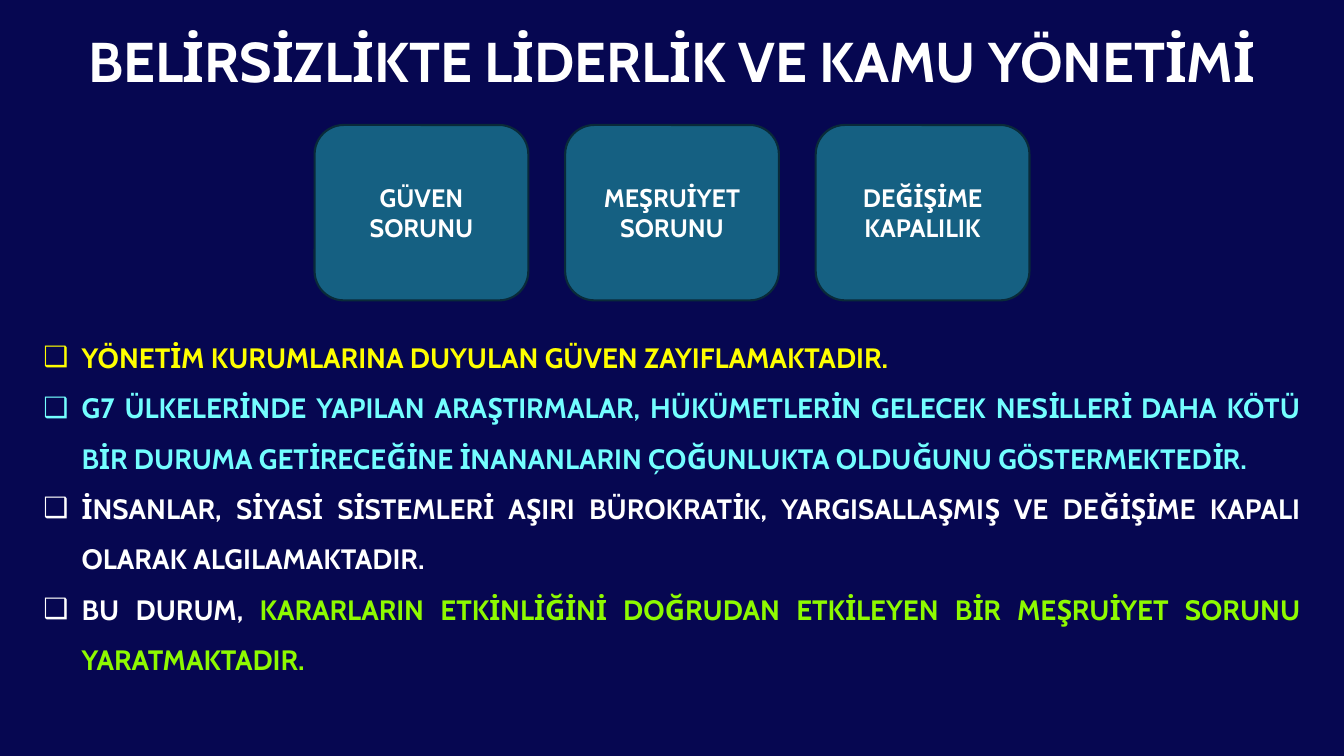
from lxml import etree
from pptx import Presentation
from pptx import util as u
from pptx.dml import color
from pptx.enum import shapes, text
from pptx.oxml import ns

NAVY, WHITE = "060751", "FFFFFF"
TITLE = "BELİRSİZLİKTE LİDERLİK VE KAMU YÖNETİMİ"
CARDS = ["GÜVEN SORUNU", "MEŞRUİYET SORUNU", "DEĞİŞİME KAPALILIK"]
POINTS = [
    [("YÖNETİM KURUMLARINA DUYULAN GÜVEN ZAYIFLAMAKTADIR.", "FFFF00")],
    [("G7 ÜLKELERİNDE YAPILAN ARAŞTIRMALAR, HÜKÜMETLERİN GELECEK NESİLLERİ "
      "DAHA KÖTÜ BİR DURUMA GETİRECEĞİNE İNANANLARIN ÇOĞUNLUKTA OLDUĞUNU "
      "GÖSTERMEKTEDİR.", "73FEFF")],
    [("İNSANLAR, SİYASİ SİSTEMLERİ AŞIRI BÜROKRATİK, YARGISALLAŞMIŞ VE "
      "DEĞİŞİME KAPALI OLARAK ALGILAMAKTADIR.", WHITE)],
    [("BU DURUM, ", WHITE),
     ("KARARLARIN ETKİNLİĞİNİ DOĞRUDAN ETKİLEYEN BİR MEŞRUİYET SORUNU "
      "YARATMAKTADIR.", "8EFA00")],
]


def paint(fill, tone):
    """Fill with a solid colour given as a hex string."""
    fill.solid()
    fill.fore_color.rgb = color.RGBColor.from_string(tone)


def apply(item, **values):
    """Set each named format value on an item."""
    for name, value in values.items():
        setattr(item, name, value)


def place(shape, left, top, width, height):
    """Move and size a shape, in inches."""
    apply(shape, left=u.Inches(left), top=u.Inches(top),
          width=u.Inches(width), height=u.Inches(height))


def write(para, runs, size, **form):
    """Write coloured bold runs into a formatted paragraph."""
    apply(para, **form)
    for words, tone in runs:
        run = para.add_run()
        run.text = words
        apply(run.font, name="Cabin", size=u.Pt(size), bold=True)
        paint(run.font.fill, tone)


def bullet(para):
    """Give a paragraph a hanging box bullet."""
    props = para._p.get_or_add_pPr()
    indent = u.Inches(0.38)
    props.set("marL", str(indent))
    props.set("indent", str(-indent))
    etree.SubElement(props, ns.qn("a:buChar")).set("char", "❑")


def add_title(slide):
    """Set the slide title."""
    title = slide.shapes.title
    place(title, 0.33, 0.2, 12.67, 0.87)
    title.text_frame.vertical_anchor = text.MSO_ANCHOR.MIDDLE
    write(title.text_frame.paragraphs[0], [(TITLE, WHITE)], 40,
          alignment=text.PP_ALIGN.CENTER, line_spacing=0.9)


def add_cards(slide):
    """Draw the row of rounded problem cards as one group."""
    left, span, width = 3.12, 7.09, 2.12
    step = (span - width) / (len(CARDS) - 1)
    group = slide.shapes.add_group_shape()
    for i, label in enumerate(CARDS):
        card = group.shapes.add_shape(
            shapes.MSO_SHAPE.ROUNDED_RECTANGLE, u.Inches(left + i * step),
            u.Inches(1.24), u.Inches(width), u.Inches(1.74))
        card.shadow.inherit = False
        paint(card.fill, "156082")
        paint(card.line.fill, "092A39")
        card.line.width = u.Pt(1.5)
        apply(card.text_frame, word_wrap=True,
              vertical_anchor=text.MSO_ANCHOR.MIDDLE)
        write(card.text_frame.paragraphs[0], [(label, WHITE)], 18,
              alignment=text.PP_ALIGN.CENTER)


def add_points(slide):
    """Fill the body placeholder with the bulleted points."""
    body = slide.placeholders[1]
    place(body, 0.33, 3.16, 12.67, 3.59)
    paint(body.fill, NAVY)
    frame = body.text_frame
    apply(frame, word_wrap=True, vertical_anchor=text.MSO_ANCHOR.TOP,
          auto_size=text.MSO_AUTO_SIZE.NONE)
    for i, runs in enumerate(POINTS):
        para = frame.add_paragraph() if i else frame.paragraphs[0]
        bullet(para)
        write(para, runs, 20, alignment=text.PP_ALIGN.JUSTIFY,
              line_spacing=1.5, space_before=u.Pt(0))


def main():
    """Build and save the slide."""
    deck = Presentation()
    apply(deck, slide_width=u.Inches(13.33), slide_height=u.Inches(7.5))
    slide = deck.slides.add_slide(deck.slide_layouts[1])
    paint(slide.background.fill, NAVY)
    add_points(slide)
    add_title(slide)
    add_cards(slide)
    deck.save("out.pptx")


if __name__ == "__main__":
    main()
